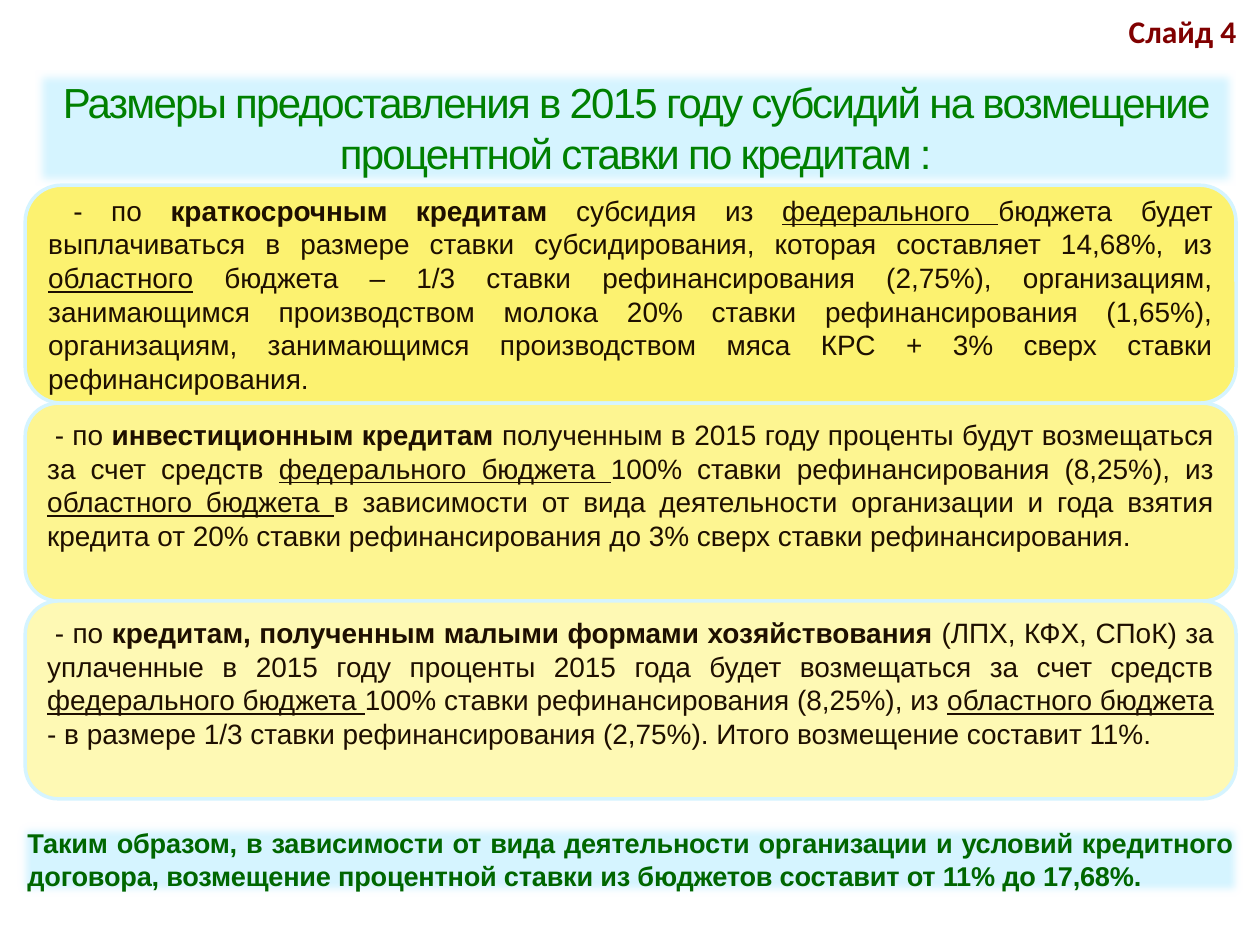
from lxml import etree
from pptx import Presentation
from pptx.dml.color import RGBColor
from pptx.enum.shapes import MSO_SHAPE
from pptx.enum.text import MSO_ANCHOR, MSO_AUTO_SIZE, PP_ALIGN
from pptx.oxml.ns import qn
from pptx.util import Inches, Pt

RECT, ROUND = MSO_SHAPE.RECTANGLE, MSO_SHAPE.ROUNDED_RECTANGLE
TOP, MIDDLE = MSO_ANCHOR.TOP, MSO_ANCHOR.MIDDLE
CENTER, JUSTIFY, LEFT = PP_ALIGN.CENTER, PP_ALIGN.JUSTIFY, PP_ALIGN.LEFT
NO_FIT = MSO_AUTO_SIZE.NONE

SKY = RGBColor(0xD5, 0xF4, 0xFF)
MAROON = RGBColor(0x80, 0x00, 0x00)
GREEN = RGBColor(0x00, 0x80, 0x00)
FOREST = RGBColor(0x00, 0x66, 0x00)
BROWN = RGBColor(0x1E, 0x0F, 0x00)
GOLD = RGBColor(0xFC, 0xF2, 0x70)
LEMON = RGBColor(0xFD, 0xF5, 0x91)
CREAM = RGBColor(0xFE, 0xF9, 0xB4)

TITLE = "Размеры предоставления в 2015 году субсидий на возмещение процентной ставки по кредитам :"
TOTAL = ("Таким образом, в зависимости от вида деятельности организации и условий кредитного "
         "договора, возмещение процентной ставки из бюджетов составит от 11% до 17,68%.")
SHORT = [
    ("- по ", {}),
    ("краткосрочным кредитам", {"bold": True}),
    (" субсидия из ", {}),
    ("федерального ", {"underline": True}),
    ("бюджета будет выплачиваться в размере ставки субсидирования, "
     "которая составляет 14,68%, из ", {}),
    ("областного", {"underline": True}),
    (" бюджета – 1/3 ставки рефинансирования (2,75%), организациям, занимающимся "
     "производством молока 20% ставки рефинансирования (1,65%), организациям, "
     "занимающимся производством мяса КРС + 3% сверх ставки рефинансирования.", {}),
]
INVEST = [
    ("- по ", {}),
    ("инвестиционным кредитам ", {"bold": True}),
    ("полученным в 2015 году проценты будут возмещаться за счет средств ", {}),
    ("федерального бюджета ", {"underline": True}),
    ("100% ставки рефинансирования (8,25%), из ", {}),
    ("областного бюджета ", {"underline": True}),
    ("в зависимости от вида деятельности организации и года взятия кредита "
     "от 20% ставки рефинансирования до 3% сверх ставки рефинансирования.", {}),
]
SMALL = [
    ("- по ", {}),
    ("кредитам, полученным малыми формами хозяйствования ", {"bold": True}),
    ("(ЛПХ, КФХ, СПоК) за уплаченные в 2015 году проценты 2015 года "
     "будет возмещаться за счет средств ", {}),
    ("федерального бюджета ", {"underline": True}),
    ("100% ставки рефинансирования (8,25%), из ", {}),
    ("областного бюджета", {"underline": True}),
    (" - в размере 1/3 ставки рефинансирования (2,75%). Итого возмещение составит 11%.", {}),
]
CARDS = [
    (SHORT, GOLD, 1.73, 0.2, 0.05),
    (INVEST, LEMON, 1.57, 0.06, 0.32),
    (SMALL, CREAM, 1.57, 0.06, 0.32),
]


def apply(item, style):
    """Set each attribute of an object from a dict."""
    for name, value in style.items():
        setattr(item, name, value)


def write(shape, runs, font, color, align, frame, gap=0, indent=0):
    """Write one paragraph of styled runs into a shape."""
    text = shape.text_frame
    apply(text, {"word_wrap": True, "auto_size": NO_FIT, **frame})
    para = text.paragraphs[0]
    para.alignment = align
    para._p.get_or_add_pPr().set("indent", str(Inches(indent)))
    for words, extra in runs:
        run = para.add_run()
        run.text = words
        apply(run.font, {"name": "Arial", **font, **extra})
        run.font.color.rgb = color
        if gap:
            run._r.get_or_add_rPr().set("spc", str(gap))


def glow(shape):
    """Give a shape a sky fill with soft edges."""
    shape.fill.solid()
    shape.fill.fore_color.rgb = SKY
    shape.line.fill.background()
    shape.shadow.inherit = False
    effects = shape._element.spPr.find(qn("a:effectLst"))
    etree.SubElement(effects, qn("a:softEdge"), rad=str(Pt(5)))


def label(slide, box):
    """Place the slide number label."""
    shape = slide.shapes.add_textbox(*map(Inches, box))
    write(shape, [("Слайд 4", {})], {"name": "Calibri", "size": Pt(18), "bold": True},
          MAROON, LEFT, {"word_wrap": False})


def header(slide, box):
    """Place the title on its soft band."""
    shape = slide.shapes.title
    apply(shape, dict(zip(("left", "top", "width", "height"), map(Inches, box))))
    glow(shape)
    write(shape, [(TITLE, {})], {"size": Pt(24)}, GREEN, CENTER,
          {"vertical_anchor": TOP}, -100)


def stack(slide, box):
    """Stack the credit cards from the top of the box."""
    left, top, width = box
    for runs, color, height, indent, foot in CARDS:
        card = slide.shapes.add_shape(ROUND, *map(Inches, (left, top, width, height)))
        card.shadow.inherit = False
        card.fill.solid()
        card.fill.fore_color.rgb = color
        card.line.color.rgb = SKY
        card.line.width = Pt(2)
        write(card, runs, {"size": Pt(16)}, BROWN, JUSTIFY,
              {"vertical_anchor": MIDDLE, "margin_bottom": Inches(foot)}, indent=indent)
        top += height


def footer(slide, box):
    """Place the conclusion on its soft band."""
    shape = slide.shapes.add_shape(RECT, *map(Inches, box))
    glow(shape)
    write(shape, [(TOTAL, {})], {"size": Pt(15.5), "bold": True}, FOREST, JUSTIFY,
          {"vertical_anchor": TOP}, -10)


def main():
    """Build the slide and save it."""
    deck = Presentation()
    apply(deck, {"slide_width": Inches(10), "slide_height": Inches(7.5)})
    slide = deck.slides.add_slide(deck.slide_layouts[5])
    label(slide, (8.86, 0.05, 1.07, 0.4))
    header(slide, (0.28, 0.56, 9.53, 0.91))
    stack(slide, (0.2, 1.47, 9.61))
    footer(slide, (0.12, 6.51, 9.76, 0.62))
    deck.save("out.pptx")


if __name__ == "__main__":
    main()
